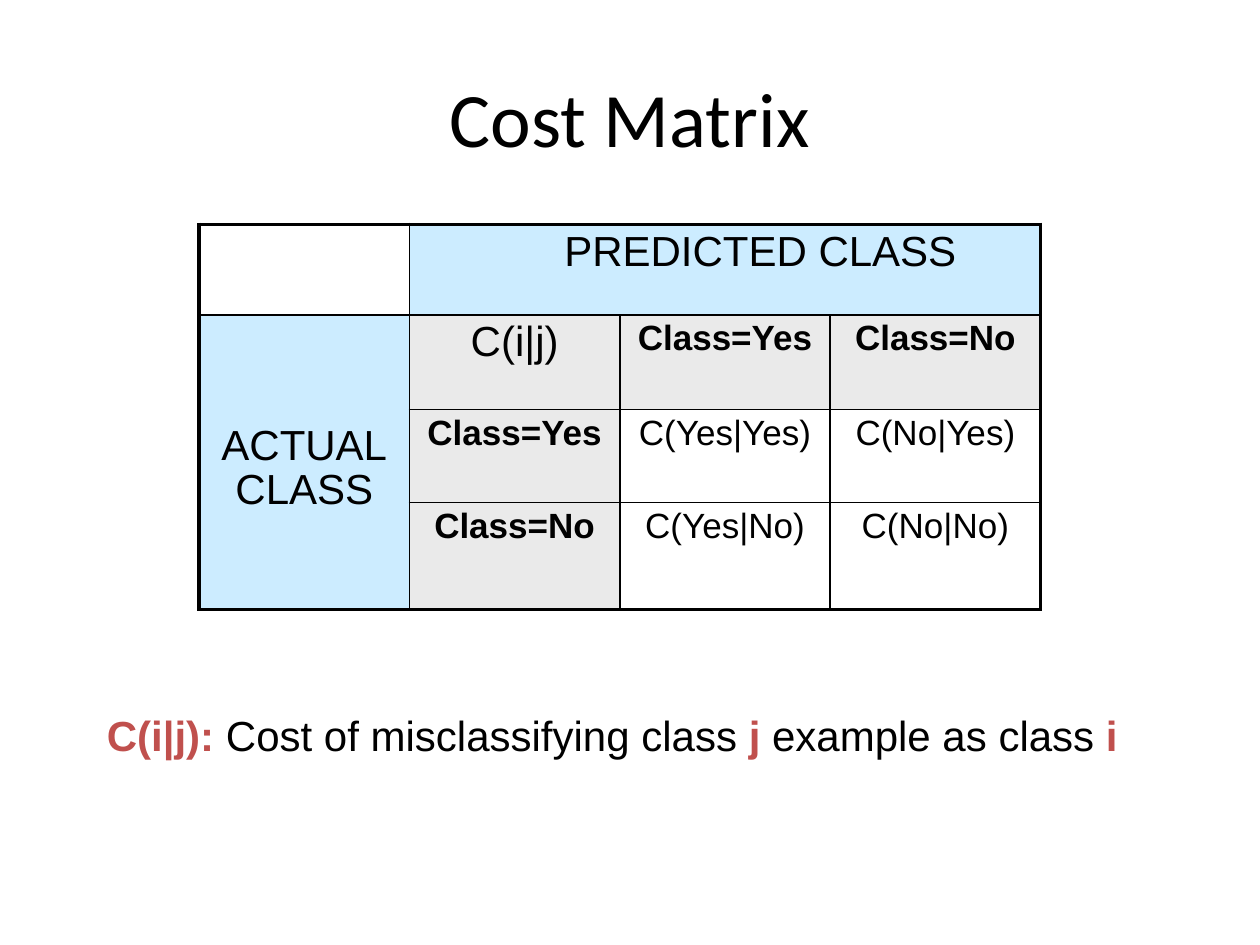
from lxml import etree
from pptx import Presentation
from pptx import util as u
from pptx.dml.color import RGBColor
from pptx.enum import text
from pptx.oxml import ns

BLACK = RGBColor(0x00, 0x00, 0x00)
WHITE = RGBColor(0xFF, 0xFF, 0xFF)
BLUE = RGBColor(0xCC, 0xEC, 0xFF)
GREY = RGBColor(0xEA, 0xEA, 0xEA)
RED = RGBColor(0xC0, 0x50, 0x4D)

THIN, THICK = 1, 2.25


def write(paragraph, content, size=24, font="Arial", color=BLACK, bold=False):
    """Append formatted text to a paragraph; a newline becomes a line break."""
    for number, line in enumerate(content.split("\n")):
        if number:
            paragraph.add_line_break()
        run = paragraph.add_run()
        run.text = line
        run.font.size = u.Pt(size)
        run.font.name = font
        run.font.color.rgb = color
        run.font.bold = bold


def set_borders(cell, widths):
    """Draw the left, right, top and bottom borders ahead of the cell's fill."""
    properties = cell._tc.get_or_add_tcPr()
    for position, (side, width) in enumerate(widths.items()):
        line = etree.Element(ns.qn(f"a:ln{side}"), w=str(u.Pt(width)))
        fill = etree.SubElement(line, ns.qn("a:solidFill"))
        etree.SubElement(fill, ns.qn("a:srgbClr"), val=str(BLACK))
        properties.insert(position, line)


class SlideBuilder:
    """Holds the style and the current slide."""

    def __init__(self, presentation):
        self.slide = presentation.slides.add_slide(presentation.slide_layouts[5])

    def title(self, content, left, top, width, height):
        shape = self.slide.shapes.title
        shape.left, shape.top = u.Inches(left), u.Inches(top)
        shape.width, shape.height = u.Inches(width), u.Inches(height)
        shape.text_frame.vertical_anchor = text.MSO_ANCHOR.MIDDLE
        paragraph = shape.text_frame.paragraphs[0]
        paragraph.alignment = text.PP_ALIGN.CENTER
        write(paragraph, content, size=44, font="Calibri")

    def table(self, left, top, column_widths, row_heights):
        frame = self.slide.shapes.add_table(
            len(row_heights), len(column_widths), u.Inches(left), u.Inches(top),
            u.Inches(sum(column_widths)), u.Inches(sum(row_heights)))
        table = frame.table
        table.first_row = table.horz_banding = False
        for column, width in zip(table.columns, column_widths):
            column.width = u.Inches(width)
        for row, height in zip(table.rows, row_heights):
            row.height = u.Inches(height)
        return table

    def cell(self, table, row, column, content, fill=WHITE, span=(1, 1),
             margin_left=0.1, margin_top=0.05, **style):
        cell = table.cell(row, column)
        last_row, last_column = row + span[0] - 1, column + span[1] - 1
        if span != (1, 1):
            cell.merge(table.cell(last_row, last_column))
        cell.fill.solid()
        cell.fill.fore_color.rgb = fill
        cell.margin_left = u.Inches(margin_left)
        cell.margin_top = u.Inches(margin_top)

        # Thick lines on the table's outer edge, thin ones inside
        set_borders(cell, {
            "L": THICK if column == 0 else THIN,
            "R": THICK if last_column == len(table.columns) - 1 else THIN,
            "T": THICK if row == 0 else THIN,
            "B": THICK if last_row == len(table.rows) - 1 else THIN,
        })
        if content:
            paragraph = cell.text_frame.paragraphs[0]
            paragraph.alignment = text.PP_ALIGN.CENTER
            paragraph.line_spacing = 0.95
            paragraph.space_before = u.Pt(2.4)
            paragraph.space_after = u.Pt(4)
            write(paragraph, content, **style)

    def caption(self, parts, left, top, width, height):
        box = self.slide.shapes.add_textbox(
            u.Inches(left), u.Inches(top), u.Inches(width), u.Inches(height))
        box.text_frame.word_wrap = True
        paragraph = box.text_frame.paragraphs[0]
        paragraph.space_before = u.Pt(3)
        properties = paragraph._p.get_or_add_pPr()
        properties.set("marL", str(u.Inches(0.32)))
        properties.set("indent", str(u.Inches(-0.32)))
        for content, is_term in parts:
            write(paragraph, content, color=RED if is_term else BLACK, bold=is_term)


def main():
    presentation = Presentation()
    presentation.slide_width = u.Inches(10)
    presentation.slide_height = u.Inches(7.5)
    builder = SlideBuilder(presentation)

    builder.title("Cost Matrix", 0.5, 0.3, 9, 1.25)

    # Matrix headings
    matrix = builder.table(1.58, 1.78, [1.67] * 4, [0.72, 0.75, 0.74, 0.85])
    builder.cell(matrix, 0, 0, "")
    builder.cell(matrix, 0, 1, "PREDICTED CLASS", fill=BLUE, span=(1, 3),
                 margin_left=0.66)
    builder.cell(matrix, 1, 0, "ACTUAL\nCLASS", fill=BLUE, span=(3, 1),
                 margin_top=0.87)
    builder.cell(matrix, 1, 1, "C(i|j)", fill=GREY)

    # Class labels and the cost of each pair
    labels = ["Yes", "No"]
    for index, actual in enumerate(labels, start=2):
        builder.cell(matrix, 1, index, f"Class={actual}", fill=GREY, size=20, bold=True)
        builder.cell(matrix, index, 1, f"Class={actual}", fill=GREY, size=20, bold=True)
        for column, predicted in enumerate(labels, start=2):
            builder.cell(matrix, index, column, f"C({predicted}|{actual})", size=20)

    # Definition under the matrix
    builder.caption([("C(i|j): ", True), ("Cost of misclassifying class ", False),
                     ("j", True), (" example as class ", False), ("i", True)],
                    0.75, 5.58, 8.58, 1)

    presentation.save("out.pptx")


if __name__ == "__main__":
    main()
